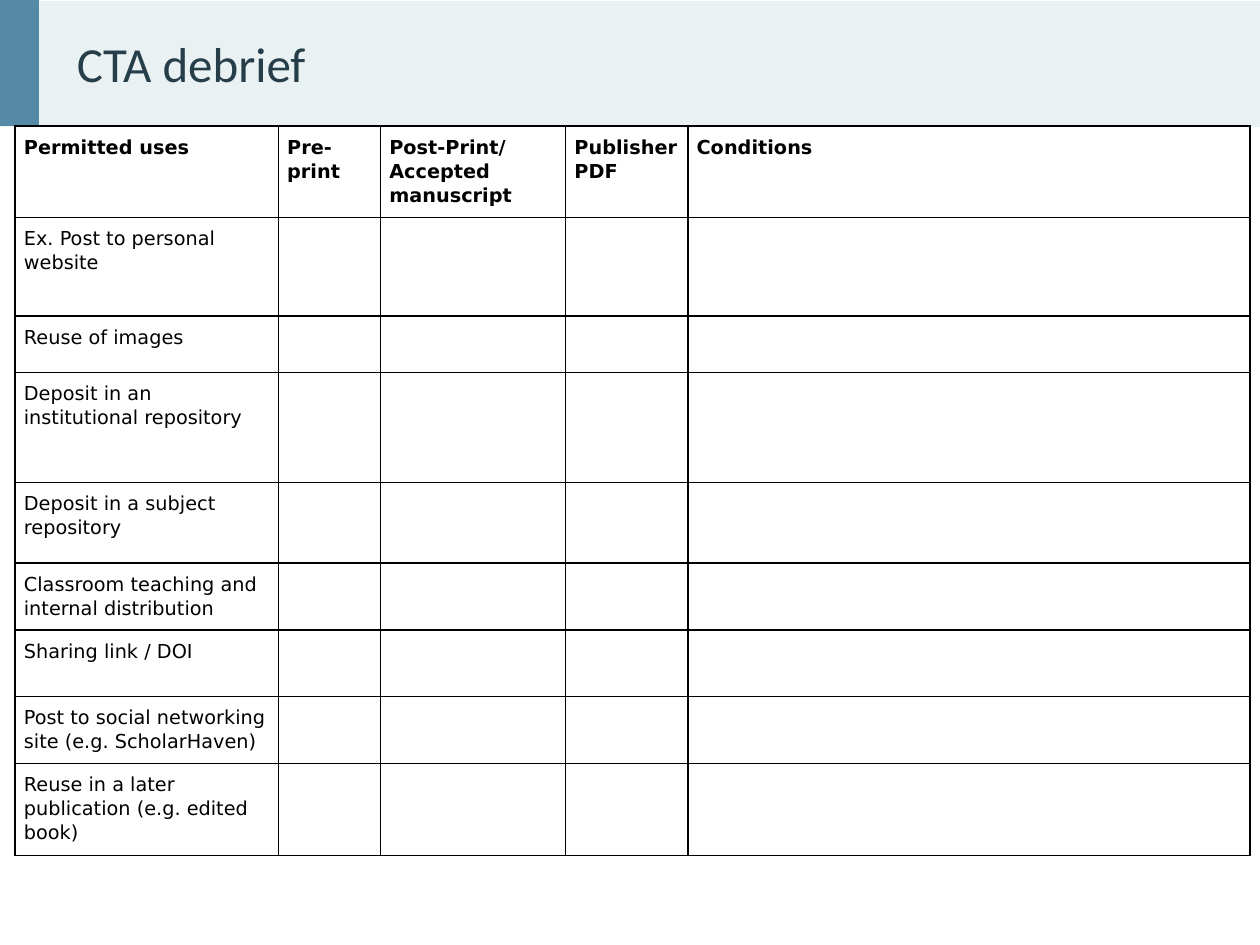
import pptx
import pptx.dml.color
import pptx.enum.text
import pptx.oxml
import pptx.oxml.ns
import pptx.util
from pptx.dml.color import RGBColor
from pptx.util import Inches

BLACK = RGBColor(0x00, 0x00, 0x00)
WHITE = RGBColor(0xFF, 0xFF, 0xFF)
BAND = RGBColor(0xE9, 0xF1, 0xF2)
ACCENT = RGBColor(0x54, 0x8A, 0xA5)
TITLE = RGBColor(0x26, 0x3E, 0x4A)

HEADINGS = ["Permitted uses", "Pre-print", "Post-Print/Accepted manuscript",
            "Publisher PDF", "Conditions"]
USES = [
    "Ex. Post to personal website",
    "Reuse of images",
    "Deposit in an institutional repository",
    "Deposit in a subject repository",
    "Classroom teaching and internal distribution",
    "Sharing link / DOI",
    "Post to social networking site (e.g. ScholarHaven)",
    "Reuse in a later publication (e.g. edited book)",
]
COLUMN_WIDTHS = [2.09, 0.81, 1.47, 0.97, 4.46]
ROW_HEIGHTS = [0.52, 0.78, 0.45, 0.87, 0.64, 0.51, 0.53, 0.53, 0.53]


def write_text(text_frame, text, *, font, size, color, bold=False, line_spacing=1.0):
    paragraph = text_frame.paragraphs[0]
    paragraph.line_spacing = line_spacing
    run = paragraph.add_run()
    run.text = text
    run.font.name = font
    run.font.size = pptx.util.Pt(size)
    run.font.color.rgb = color
    run.font.bold = bold


def set_margins(target, horizontal, vertical):
    target.margin_left = target.margin_right = Inches(horizontal)
    target.margin_top = target.margin_bottom = Inches(vertical)


def add_rectangle(slide, left, top, width, height, color):
    shape = slide.shapes.add_shape(
        pptx.enum.shapes.MSO_SHAPE.RECTANGLE,
        Inches(left), Inches(top), Inches(width), Inches(height))
    shape.shadow.inherit = False
    shape.fill.solid()
    shape.fill.fore_color.rgb = color
    shape.line.fill.background()


def add_title_band(slide, left, top, width, height, text):
    accent_width = 0.31
    add_rectangle(slide, left, top + 0.01, width, height, BAND)
    add_rectangle(slide, left, top, accent_width, height, ACCENT)
    text_box = slide.shapes.add_textbox(
        Inches(left + accent_width), Inches(top),
        Inches(width - accent_width), Inches(height))
    text_frame = text_box.text_frame
    text_frame.word_wrap = True
    text_frame.vertical_anchor = pptx.enum.text.MSO_ANCHOR.MIDDLE
    set_margins(text_frame, 0.3, 0.05)
    write_text(text_frame, text, font="Calibri", size=28, color=TITLE)


def add_borders(cell, color, width):
    properties = cell._tc.get_or_add_tcPr()
    for edge in ("lnL", "lnR", "lnT", "lnB"):
        properties.append(pptx.oxml.parse_xml(
            f'<a:{edge} {pptx.oxml.ns.nsdecls("a")} w="{pptx.util.Pt(width)}">'
            f'<a:solidFill><a:srgbClr val="{color}"/></a:solidFill></a:{edge}>'))


def add_uses_table(slide, left, top):
    frame = slide.shapes.add_table(
        len(ROW_HEIGHTS), len(COLUMN_WIDTHS), Inches(left), Inches(top),
        Inches(sum(COLUMN_WIDTHS)), Inches(sum(ROW_HEIGHTS)))
    table = frame.table
    table.first_row = table.horz_banding = False
    for column, width in zip(table.columns, COLUMN_WIDTHS):
        column.width = Inches(width)
    for row, height in zip(table.rows, ROW_HEIGHTS):
        row.height = Inches(height)

    for cell in table.iter_cells():
        add_borders(cell, BLACK, 1)
        cell.fill.solid()
        cell.fill.fore_color.rgb = WHITE

    labels = [(table.cell(0, column), text, True) for column, text in enumerate(HEADINGS)]
    labels += [(table.cell(row, 0), text, False) for row, text in enumerate(USES, start=1)]
    for cell, text, bold in labels:
        set_margins(cell, 0.07, 0.07)
        write_text(cell.text_frame, text, font="DejaVu Sans", size=11,
                   color=BLACK, bold=bold, line_spacing=1.07)


def main():
    presentation = pptx.Presentation()
    presentation.slide_width = Inches(10)
    presentation.slide_height = Inches(7.5)
    slide = presentation.slides.add_slide(presentation.slide_layouts[6])
    add_title_band(slide, 0, 0, 10, 1, "CTA debrief")
    add_uses_table(slide, 0.12, 1)
    presentation.save("out.pptx")


if __name__ == "__main__":
    main()
